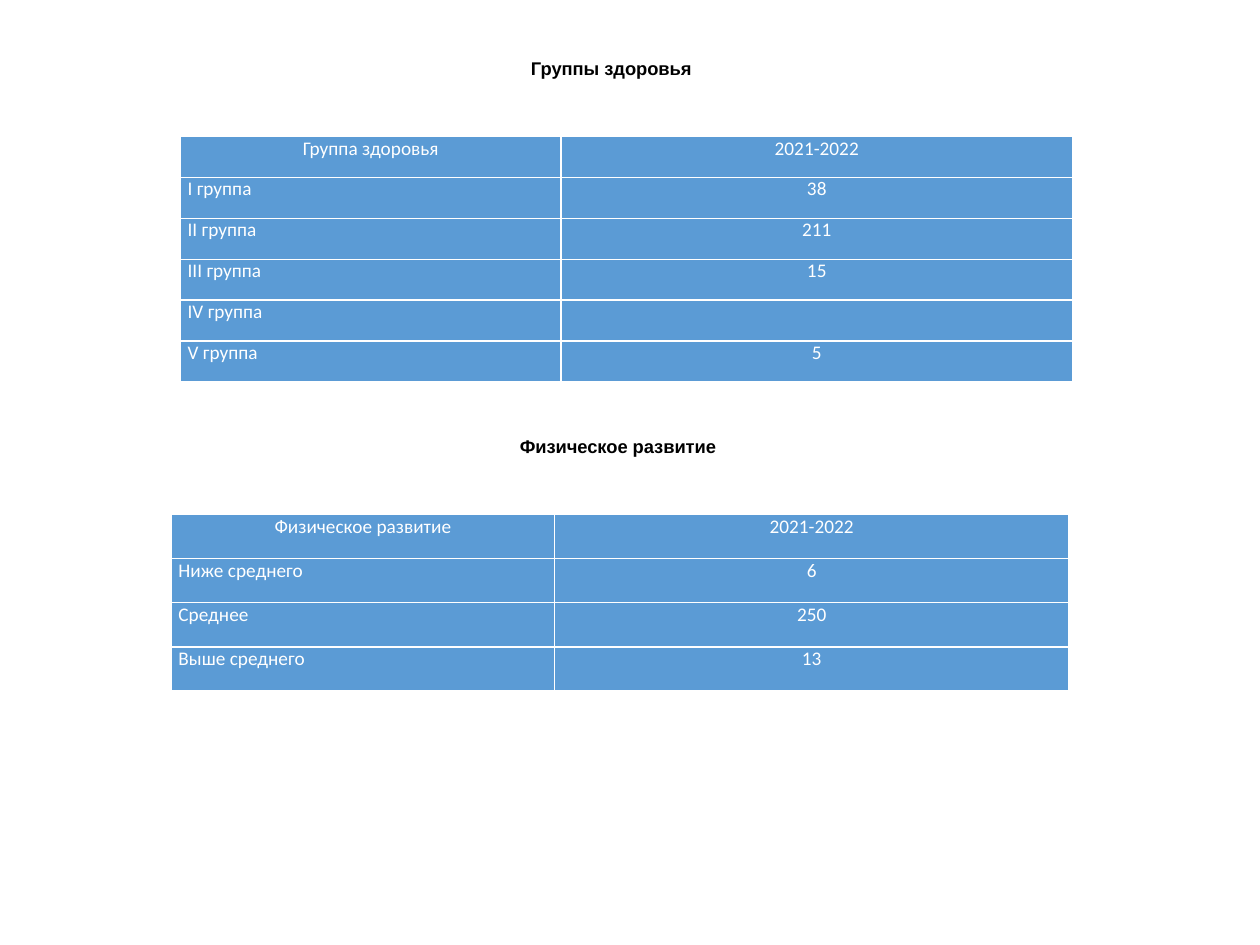
from lxml import etree
from pptx import Presentation
from pptx.dml.color import RGBColor
from pptx.enum.text import MSO_ANCHOR, MSO_AUTO_SIZE, PP_ALIGN
from pptx.oxml.ns import qn
from pptx.util import Pt

CENTER, JUSTIFY, LEFT = PP_ALIGN.CENTER, PP_ALIGN.JUSTIFY, PP_ALIGN.LEFT
TOP, NO_FIT = MSO_ANCHOR.TOP, MSO_AUTO_SIZE.NONE
BLUE, WHITE, BLACK = "5B9BD5", "FFFFFF", "000000"


def rgb(value):
    return RGBColor.from_string(value)


def add_borders(cell, color, width):
    tcPr = cell._tc.get_or_add_tcPr()
    for i, side in enumerate(("a:lnL", "a:lnR", "a:lnT", "a:lnB")):
        ln = etree.Element(qn(side), w=str(Pt(width)))
        fill = etree.SubElement(ln, qn("a:solidFill"))
        etree.SubElement(fill, qn("a:srgbClr"), val=color)
        tcPr.insert(i, ln)


prs = Presentation()
prs.slide_width, prs.slide_height = Pt(720), Pt(540)
s = prs.slides.add_slide(prs.slide_layouts[5])

# Headings: the first is the slide title
headings = [
    (s.shapes.title, "Группы здоровья", 298, 30.2, 119.5),
    (s.shapes.add_textbox(0, 0, 0, 0), "Физическое развитие", 291.6, 246.2, 126),
]
for sp, text, left, top, width in headings:
    sp.left, sp.top, sp.width, sp.height = Pt(left), Pt(top), Pt(width), Pt(34.5)
    tf = sp.text_frame
    tf.word_wrap, tf.auto_size, tf.vertical_anchor = True, NO_FIT, TOP
    tf.margin_left = tf.margin_right = Pt(5.4)
    tf.margin_top = tf.margin_bottom = Pt(2.7)
    p = tf.paragraphs[0]
    p.alignment = LEFT
    r = p.add_run()
    r.text = text
    r.font.name, r.font.size, r.font.bold = "Arial", Pt(10.5), True
    r.font.color.rgb = rgb(BLACK)

# Tables: left, top, column widths, row height, rows
tables = [
    (103.2, 78, (217.4, 292.3), 23.4, [
        ("Группа здоровья", "2021-2022"),
        ("I группа", "38"),
        ("II группа", "211"),
        ("III группа", "15"),
        ("IV группа", ""),
        ("V группа", "5"),
    ]),
    (98, 294, (218.9, 293.9), 25.2, [
        ("Физическое развитие", "2021-2022"),
        ("Ниже среднего", "6"),
        ("Среднее", "250"),
        ("Выше среднего", "13"),
    ]),
]
for left, top, widths, row_height, rows in tables:
    table = s.shapes.add_table(
        len(rows), len(widths), Pt(left), Pt(top),
        Pt(sum(widths)), Pt(row_height * len(rows))).table
    table.horz_banding = False
    table.first_row = False
    for column, width in zip(table.columns, widths):
        column.width = Pt(width)
    for i, row in enumerate(rows):
        table.rows[i].height = Pt(row_height)
        for j, text in enumerate(row):
            cell = table.cell(i, j)
            cell.margin_left = cell.margin_right = Pt(4)
            cell.margin_top = cell.margin_bottom = 0
            cell.fill.solid()
            cell.fill.fore_color.rgb = rgb(BLUE)
            add_borders(cell, WHITE, 1)
            if text:
                p = cell.text_frame.paragraphs[0]
                p.alignment = JUSTIFY if i and j == 0 else CENTER
                r = p.add_run()
                r.text = text
                r.font.name, r.font.size = "Calibri", Pt(11)
                r.font.color.rgb = rgb(WHITE)

prs.save("out.pptx")
